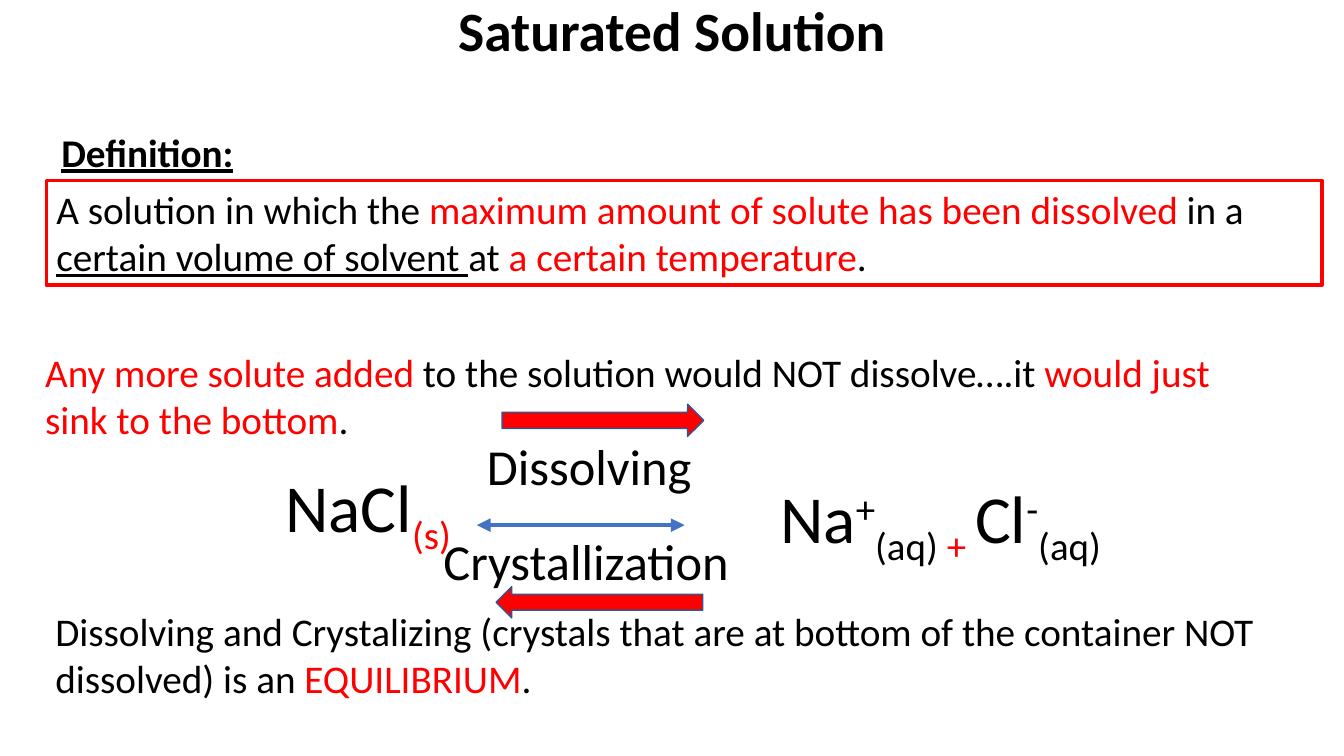
from dataclasses import dataclass
from typing import Optional

import lxml.etree
import pptx
import pptx.dml.color
import pptx.enum.shapes
import pptx.enum.text
import pptx.oxml.ns
import pptx.util

Inches = pptx.util.Inches
Pt = pptx.util.Pt
MSO_SHAPE = pptx.enum.shapes.MSO_SHAPE
COLOURS = {"text": "000000", "accent": "FF0000", "outline": "325491", "equilibrium": "4472C4"}
SUPERSCRIPT, SUBSCRIPT = 30, -25


@dataclass
class Piece:
    text: str
    colour: str = "text"
    bold: bool = False
    underline: bool = False
    baseline: int = 0


@dataclass
class Passage:
    left: float
    top: float
    width: float
    height: float
    size: float
    pieces: list[Piece]
    border: Optional[str] = None


@dataclass
class ReactionArrow:
    kind: MSO_SHAPE
    left: float
    top: float
    width: float
    height: float


PASSAGES = [
    Passage(0.51, 1.22, 1.97, 0.57, 28, [Piece("Definition:", bold=True, underline=True)]),
    Passage(0.46, 1.79, 12.65, 1.04, 28, [
        Piece("A solution in which the "),
        Piece("maximum amount of solute has been dissolved", "accent"),
        Piece(" in a "),
        Piece("certain volume of solvent ", underline=True),
        Piece("at "),
        Piece("a certain temperature", "accent"),
        Piece("."),
    ], border="accent"),
    Passage(0.35, 3.41, 12.43, 1.04, 28, [
        Piece("Any more solute added ", "accent"),
        Piece("to the solution would NOT dissolve….it "),
        Piece("would just sink to the bottom", "accent"),
        Piece("."),
    ]),
    Passage(0.45, 5.98, 12.43, 1.04, 28, [
        Piece("Dissolving and Crystalizing (crystals that are at bottom of the container NOT dissolved) is an "),
        Piece("EQUILIBRIUM", "accent"),
        Piece("."),
    ]),
    Passage(2.73, 4.57, 2.25, 0.91, 48, [
        Piece("NaCl"),
        Piece("(s)", "accent", baseline=SUBSCRIPT),
    ]),
    Passage(4.73, 4.27, 2.25, 0.71, 36, [Piece("Dissolving")]),
    Passage(7.64, 4.68, 3.86, 0.91, 48, [
        Piece("Na"),
        Piece("+", baseline=SUPERSCRIPT),
        Piece("(aq) ", baseline=SUBSCRIPT),
        Piece("+ ", "accent", baseline=SUBSCRIPT),
        Piece("Cl"),
        Piece("-", baseline=SUPERSCRIPT),
        Piece("(aq)", baseline=SUBSCRIPT),
    ]),
    Passage(4.3, 5.21, 3.12, 0.71, 36, [Piece("Crystallization")]),
]

REACTION_ARROWS = [
    ReactionArrow(MSO_SHAPE.RIGHT_ARROW, 4.98, 4.01, 2, 0.32),
    ReactionArrow(MSO_SHAPE.LEFT_ARROW, 4.92, 5.82, 2.05, 0.31),
]


def rgb(colour: str) -> pptx.dml.color.RGBColor:
    return pptx.dml.color.RGBColor.from_string(COLOURS[colour])


def add_text(paragraph, text: str, *, size: float, colour: str = "text", bold: bool = False,
             underline: bool = False, baseline: int = 0) -> None:
    run = paragraph.add_run()
    run.text = text
    run.font.name = "Calibri"
    run.font.size = Pt(size)
    run.font.color.rgb = rgb(colour)
    run.font.bold = bold
    run.font.underline = underline
    if baseline:
        run._r.get_or_add_rPr().set("baseline", str(baseline * 1000))


def add_title(slide, text: str) -> None:
    title = slide.shapes.title
    title.left, title.top = Inches(0), Inches(0)
    title.width, title.height = Inches(13.33), Inches(0.66)
    title.text_frame.vertical_anchor = pptx.enum.text.MSO_ANCHOR.MIDDLE
    title.text_frame.auto_size = pptx.enum.text.MSO_AUTO_SIZE.NONE
    heading = title.text_frame.paragraphs[0]
    heading.alignment = pptx.enum.text.PP_ALIGN.CENTER
    heading.line_spacing = 0.9
    add_text(heading, text, size=39.6, bold=True)


def add_passage(slide, passage: Passage) -> None:
    box = slide.shapes.add_textbox(Inches(passage.left), Inches(passage.top),
                                   Inches(passage.width), Inches(passage.height))
    box.text_frame.word_wrap = True
    box.text_frame.auto_size = pptx.enum.text.MSO_AUTO_SIZE.SHAPE_TO_FIT_TEXT
    if passage.border:
        box.line.color.rgb = rgb(passage.border)
        box.line.width = Pt(2.5)
    for piece in passage.pieces:
        add_text(box.text_frame.paragraphs[0], piece.text, size=passage.size, colour=piece.colour,
                 bold=piece.bold, underline=piece.underline, baseline=piece.baseline)


def add_reaction_arrow(slide, arrow: ReactionArrow) -> None:
    block = slide.shapes.add_shape(arrow.kind, Inches(arrow.left), Inches(arrow.top),
                                   Inches(arrow.width), Inches(arrow.height))
    block.shadow.inherit = False
    block.fill.solid()
    block.fill.fore_color.rgb = rgb("accent")
    block.line.color.rgb = rgb("outline")
    block.line.width = Pt(1)


def add_equilibrium_line(slide, left: float, right: float, height: float) -> None:
    equilibrium = slide.shapes.add_connector(pptx.enum.shapes.MSO_CONNECTOR.STRAIGHT,
                                             Inches(left), Inches(height), Inches(right), Inches(height))
    equilibrium.line.color.rgb = rgb("equilibrium")
    equilibrium.line.width = Pt(3.25)
    outline = equilibrium.line._get_or_add_ln()
    for end in ("a:headEnd", "a:tailEnd"):
        lxml.etree.SubElement(outline, pptx.oxml.ns.qn(end), type="triangle")
    lxml.etree.SubElement(equilibrium._element.spPr, pptx.oxml.ns.qn("a:effectLst"))


def main() -> None:
    presentation = pptx.Presentation()
    presentation.slide_width = Inches(13.33)
    presentation.slide_height = Inches(7.5)
    slide = presentation.slides.add_slide(presentation.slide_layouts[5])
    add_title(slide, "Saturated Solution")
    for passage in PASSAGES:
        add_passage(slide, passage)
    add_equilibrium_line(slide, 4.73, 6.79, 5.21)
    for arrow in REACTION_ARROWS:
        add_reaction_arrow(slide, arrow)
    presentation.save("out.pptx")


if __name__ == "__main__":
    main()
